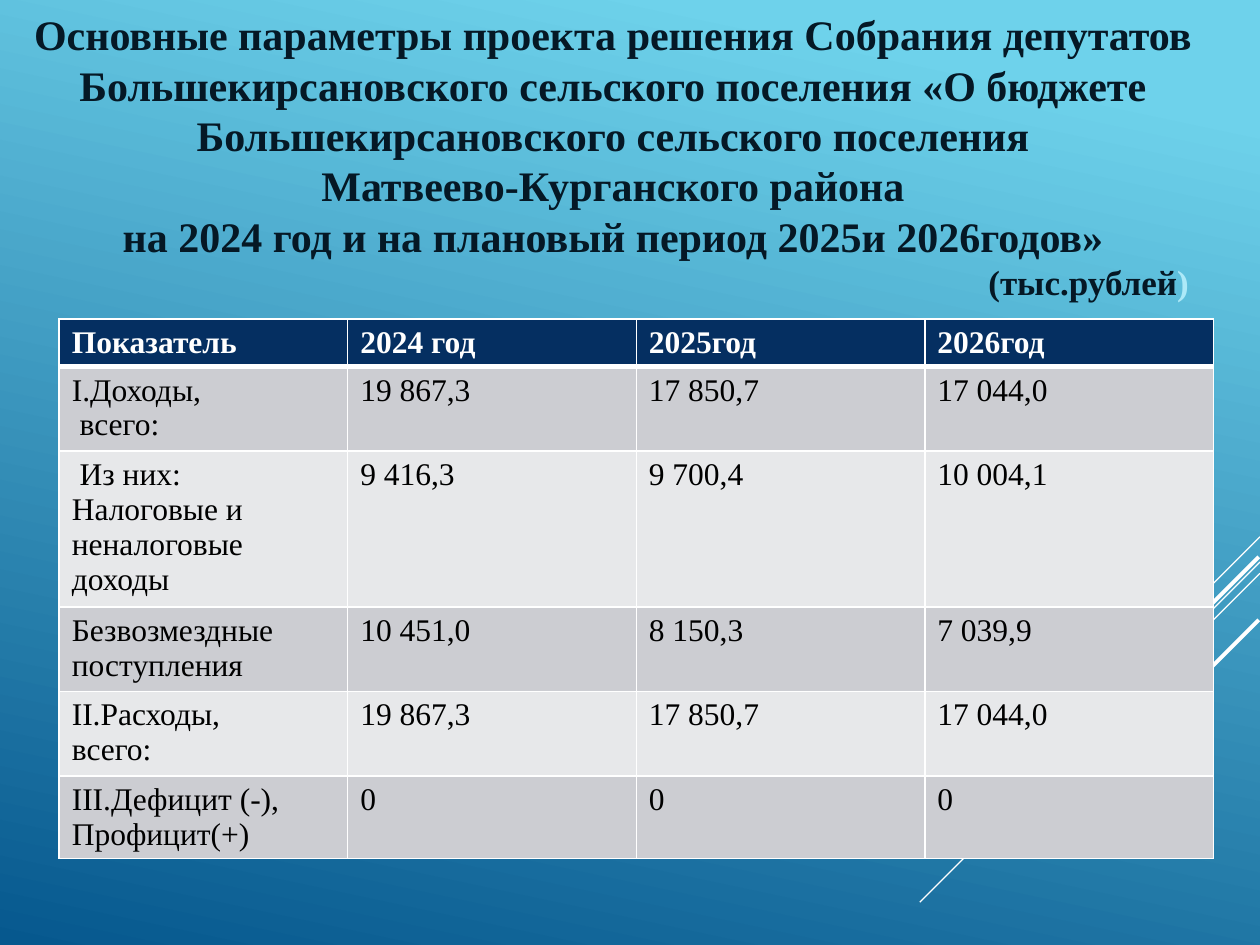
from lxml import etree
from pptx import Presentation
from pptx import util as u
from pptx.dml import color
from pptx.enum import shapes, text
from pptx.oxml import ns

COLORS = {
    "sky": "6ED2EB", "deep": "06588E", "white": "FFFFFF", "black": "000000",
    "navy": "052F61", "band": "CCCDD2", "pale": "E7E8EA", "ink": "051825", "ice": "ADE9F8",
}
WIDTH, HEIGHT = u.Inches(10), u.Inches(7.5)
FONT = "Times New Roman"

RAYS = [
    (100, 56.8, 8.3, 0.75),
    (100, 59.47, 27, 0.75),
    (100, 60.67, 17.2, 0.75),
    (99.9, 58.93, 15.7, 2.25),
    (99.9, 65.6, 11.4, 2.25),
]
TITLE = [
    "Основные параметры проекта решения Собрания депутатов Большекирсановского "
    "сельского поселения «О бюджете Большекирсановского сельского поселения",
    "Матвеево-Курганского района",
    "на 2024 год и на плановый период 2025и 2026годов»",
]
BUDGET = [
    ("Показатель", "2024 год", "2025год", "2026год"),
    ("I.Доходы,\n всего:", "19 867,3", "17 850,7", "17 044,0"),
    (" Из них:\nНалоговые и неналоговые доходы", "9 416,3", "9 700,4", "10 004,1"),
    ("Безвозмездные поступления", "10 451,0", "8 150,3", "7 039,9"),
    ("II.Расходы,\nвсего:", "19 867,3", "17 850,7", "17 044,0"),
    ("III.Дефицит (-),\nПрофицит(+)", "0", "0", "0"),
]
ROW_SHARES = [5.07, 8.93, 16.53, 8.93, 8.93, 8.67]


def across(share):
    """Return a percentage of the slide width as a length."""
    return u.Emu(round(WIDTH * share / 100))


def down(share):
    """Return a percentage of the slide height as a length."""
    return u.Emu(round(HEIGHT * share / 100))


def tint(name):
    """Return the named colour."""
    return color.RGBColor.from_string(COLORS[name])


def set_format(target, values):
    """Set every attribute in a dict of format values."""
    for name, value in values.items():
        setattr(target, name, value)


def set_font(font, size, shade, bold):
    """Set the typeface, size, weight and colour of a font."""
    set_format(font, {"name": FONT, "size": u.Pt(size), "bold": bold})
    font.color.rgb = tint(shade)


def paint_background(page):
    """Fill the page with a slanted two-colour gradient."""
    fill = page.background.fill
    fill.gradient()
    fill.gradient_angle = 258
    for stop, shade, position in zip(fill.gradient_stops, ("sky", "deep"), (0.1, 1)):
        stop.color.rgb = tint(shade)
        stop.position = position


def add_ray(page, left, top, run, weight):
    """Draw a white line falling to the left at 45 degrees."""
    start, level, reach = across(left), down(top), across(run)
    ray = page.shapes.add_connector(
        shapes.MSO_CONNECTOR.STRAIGHT, start, level, start - reach, level + reach)
    ray.line.color.rgb = tint("white")
    ray.line.width = u.Pt(weight)
    etree.SubElement(ray._element.spPr, ns.qn("a:effectLst"))


def add_borders(cell, weights):
    """Give a cell white borders with the given weights by side."""
    properties = cell._tc.get_or_add_tcPr()
    for side, weight in weights.items():
        border = etree.SubElement(properties, ns.qn(f"a:ln{side}"), w=str(u.Pt(weight)))
        fill = etree.SubElement(border, ns.qn("a:solidFill"))
        etree.SubElement(fill, ns.qn("a:srgbClr"), val=COLORS["white"])


def fill_cell(cell, words, row):
    """Write and style one cell according to its row."""
    header = row == 0
    add_borders(cell, {"L": 1, "R": 1, "T": 3 if row == 1 else 1, "B": 3 if header else 1})
    cell.fill.solid()
    cell.fill.fore_color.rgb = tint("navy" if header else ("pale", "band")[row % 2])
    cell.text = words
    for para in cell.text_frame.paragraphs:
        for span in para.runs:
            set_font(span.font, 18, "white" if header else "black", header)


def add_budget(page):
    """Add the budget table with four equal columns."""
    frame = page.shapes.add_table(
        len(BUDGET), len(BUDGET[0]), across(4.7), down(33.73), across(91.6), down(60))
    table = frame.table
    for column in table.columns:
        column.width = across(91.6 / len(BUDGET[0]))
    for row, (share, entries) in enumerate(zip(ROW_SHARES, BUDGET)):
        table.rows[row].height = down(share)
        for column, words in enumerate(entries):
            fill_cell(table.cell(row, column), words, row)


def add_spans(para, spans):
    """Write a centred bold paragraph from text, size and colour."""
    para.alignment = text.PP_ALIGN.CENTER
    for words, size, shade in spans:
        span = para.add_run()
        span.text = words
        set_font(span.font, size, shade, True)


def add_title(page):
    """Add the heading with the unit of measure under its right end."""
    box = page.shapes.add_textbox(0, down(0.27), across(97.3), down(32.8))
    frame = box.text_frame
    set_format(frame, {"word_wrap": True, "auto_size": text.MSO_AUTO_SIZE.SHAPE_TO_FIT_TEXT})
    lines = [[(words, 24, "ink")] for words in TITLE]
    lines.append([("(тыс.рублей", 20, "ink"), (")", 20, "ice")])
    for index, spans in enumerate(lines):
        para = frame.add_paragraph() if index else frame.paragraphs[0]
        add_spans(para, spans)
    para._p.get_or_add_pPr().set("marL", str(across(75.5)))


def main():
    """Build and save the deck."""
    deck = Presentation()
    set_format(deck, {"slide_width": WIDTH, "slide_height": HEIGHT})
    page = deck.slides.add_slide(deck.slide_layouts[6])
    paint_background(page)
    for ray in RAYS:
        add_ray(page, *ray)
    add_budget(page)
    add_title(page)
    deck.save("out.pptx")


if __name__ == "__main__":
    main()
